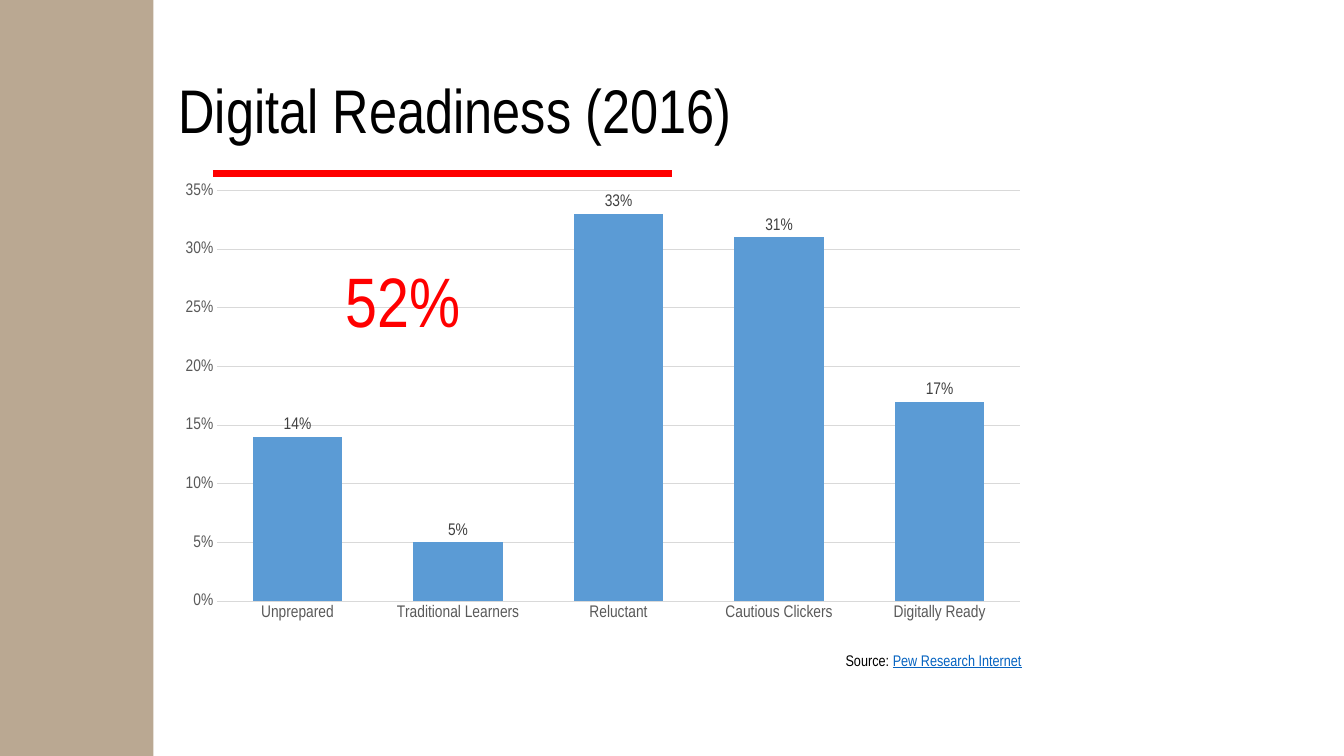
from lxml.etree import SubElement
from pptx import Presentation
from pptx.chart.data import CategoryChartData
from pptx.dml.color import RGBColor
from pptx.enum.chart import XL_CHART_TYPE, XL_LABEL_POSITION, XL_TICK_MARK
from pptx.enum.shapes import MSO_CONNECTOR, MSO_SHAPE
from pptx.enum.text import MSO_ANCHOR, MSO_AUTO_SIZE, PP_ALIGN
from pptx.oxml.ns import qn
from pptx.util import Pt

HUES = {
    "tan": "BAA892", "black": "000000", "red": "FF0000", "link": "0563C1",
    "bar": "5B9BD5", "grid": "D9D9D9", "axis": "595959", "label": "404040",
}
FACE = "Arial Narrow"


def hue(name):
    return RGBColor.from_string(HUES[name])


def style(font, size, tint, **more):
    for key, val in {"name": FACE, "size": Pt(size), **more}.items():
        setattr(font, key, val)
    font.color.rgb = hue(tint)


deck = Presentation()
deck.slide_width, deck.slide_height = Pt(960), Pt(540)
slide = deck.slides.add_slide(deck.slide_layouts[5])
shapes = slide.shapes

side = shapes.add_shape(MSO_SHAPE.RECTANGLE, Pt(0), Pt(0), Pt(109.5), Pt(540))
side.shadow.inherit = False
side.fill.solid()
side.fill.fore_color.rgb = hue("tan")
side.line.fill.background()

title = shapes.title
place = {"left": 120.25, "top": 28.8, "width": 778.3, "height": 104.4}
for key, val in place.items():
    setattr(title, key, Pt(val))
frame = title.text_frame
frame.text = "Digital Readiness (2016)"
frame.vertical_anchor = MSO_ANCHOR.MIDDLE
para = frame.paragraphs[0]
para.alignment = PP_ALIGN.LEFT
para.line_spacing = 0.9
style(para.runs[0].font, 44, "black")

data = CategoryChartData(number_format="0%")
data.categories = ["Unprepared", "Traditional Learners", "Reluctant",
                   "Cautious Clickers", "Digitally Ready"]
data.add_series("Series 1", [0.14, 0.05, 0.33, 0.31, 0.17])
chart = shapes.add_chart(XL_CHART_TYPE.COLUMN_CLUSTERED, Pt(120.25), Pt(123.85),
                         Pt(620.65), Pt(326.15), data).chart
style(chart.font, 10, "black", name="Calibri")
chart.has_title = False
chart.has_legend = False

cat, val = chart.category_axis, chart.value_axis
for axis in (cat, val):
    axis.major_tick_mark = axis.minor_tick_mark = XL_TICK_MARK.NONE
    style(axis.tick_labels.font, 12, "axis")
val.minimum_scale, val.maximum_scale, val.major_unit = 0, 0.35, 0.05
val.tick_labels.number_format = "0%"
val.tick_labels.number_format_is_linked = False
val.format.line.fill.background()
val.has_major_gridlines = True
for line in (cat.format.line, val.major_gridlines.format.line):
    line.color.rgb = hue("grid")
    line.width = Pt(0.75)

plot = chart.plots[0]
for key, item in {"gap_width": 80, "overlap": -27, "vary_by_categories": False,
                  "has_data_labels": True}.items():
    setattr(plot, key, item)
bars = plot.series[0].format.fill
bars.solid()
bars.fore_color.rgb = hue("bar")
marks = plot.data_labels
for key, item in {"show_value": True, "number_format": "0%",
                  "number_format_is_linked": False,
                  "position": XL_LABEL_POSITION.OUTSIDE_END}.items():
    setattr(marks, key, item)
style(marks.font, 12, "label")

group = shapes.add_group_shape()
notes = [
    (shapes, (596.9, 461.5, 144.7, 20.9), 11,
     [("Source: ", "black", {}),
      ("Pew Research Internet", "link", {"underline": True})]),
    (group.shapes, (239.75, 180.7, 100.8, 67.7), 50, [("52%", "red", {})]),
]
for owner, box, size, runs in notes:
    frame = owner.add_textbox(*map(Pt, box)).text_frame
    frame.word_wrap = False
    frame.auto_size = MSO_AUTO_SIZE.SHAPE_TO_FIT_TEXT
    for text, tint, more in runs:
        run = frame.paragraphs[0].add_run()
        run.text = text
        style(run.font, size, tint, **more)

rule = group.shapes.add_connector(MSO_CONNECTOR.STRAIGHT, Pt(152), Pt(123.85),
                                  Pt(480), Pt(123.85))
rule.line.color.rgb = hue("red")
rule.line.width = Pt(4.5)
SubElement(rule._element.spPr, qn("a:effectLst"))

deck.save("out.pptx")
